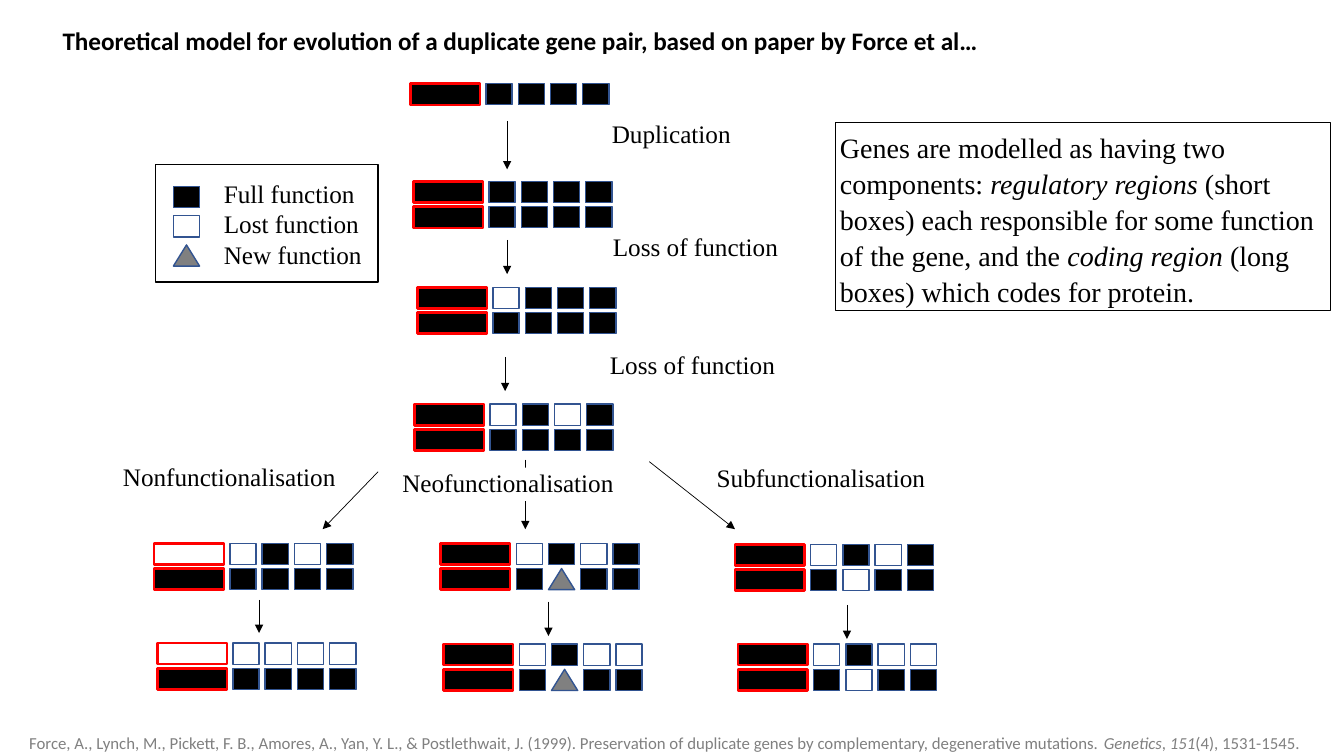
"""Slide showing a model for the evolution of a duplicate gene pair."""
from dataclasses import dataclass

import pptx
import pptx.dml.color
import pptx.enum.shapes
import pptx.enum.text
import pptx.oxml
import pptx.oxml.ns
import pptx.util

Inches = pptx.util.Inches
Pt = pptx.util.Pt
Kind = pptx.enum.shapes.MSO_SHAPE


@dataclass(frozen=True)
class Theme:
    black: str = "000000"
    white: str = "FFFFFF"
    grey: str = "808080"
    coding_line: str = "FF0000"
    regulatory_line: str = "325491"
    heading_font: str = "Calibri"
    body_font: str = "Times New Roman"
    title_size: float = 18
    label_size: float = 18
    note_size: float = 20
    citation_size: float = 12


class GeneSlide:
    coding_width, box_width, box_height = 0.69, 0.26, 0.21
    first_box, box_step, row_step = 0.75, 0.32, 0.25

    def __init__(self, slide, theme):
        self.slide = slide
        self.theme = theme
        self.fills = {"F": theme.black, "L": theme.white, "N": theme.grey}

    def color(self, value):
        return pptx.dml.color.RGBColor.from_string(value)

    def shape(self, kind, left, top, width, height, fill=None, line=None, weight=1):
        shape = self.slide.shapes.add_shape(
            kind, Inches(left), Inches(top), Inches(width), Inches(height))
        shape.shadow.inherit = False
        if fill:
            shape.fill.solid()
            shape.fill.fore_color.rgb = self.color(fill)
        else:
            shape.fill.background()
        if line:
            shape.line.color.rgb = self.color(line)
            shape.line.width = Pt(weight)
        else:
            shape.line.fill.background()
        return shape

    def set_text(self, shape, paragraphs, size, font, color, insets=(0.1, 0.05),
                 bold=False, wrap=True):
        frame = shape.text_frame
        frame.word_wrap = wrap
        if not wrap:
            frame.auto_size = pptx.enum.text.MSO_AUTO_SIZE.SHAPE_TO_FIT_TEXT
        frame.vertical_anchor = pptx.enum.text.MSO_ANCHOR.TOP
        frame.margin_left = frame.margin_right = Inches(insets[0])
        frame.margin_top = frame.margin_bottom = Inches(insets[1])
        for index, runs in enumerate(paragraphs):
            paragraph = frame.add_paragraph() if index else frame.paragraphs[0]
            paragraph.alignment = pptx.enum.text.PP_ALIGN.LEFT
            for text, italic in runs:
                run = paragraph.add_run()
                run.text = text
                run.font.name = font
                run.font.size = Pt(size)
                run.font.bold = bold
                run.font.italic = italic
                run.font.color.rgb = self.color(color)

    def title(self, text):
        title = self.slide.shapes.title
        title.left, title.top = Inches(0.52), Inches(0.2)
        title.width, title.height = Inches(9.38), Inches(0.4)
        theme = self.theme
        self.set_text(title, [[(text, False)]], theme.title_size, theme.heading_font,
                      theme.black, bold=True, wrap=False)

    def text_box(self, left, top, width, height):
        return self.slide.shapes.add_textbox(
            Inches(left), Inches(top), Inches(width), Inches(height))

    def label(self, text, left, top, width):
        theme = self.theme
        self.set_text(self.text_box(left, top, width, 0.49), [[(text, False)]],
                      theme.label_size, theme.body_font, theme.black)

    def panel(self, lines, left, top, width, height):
        theme = self.theme
        panel = self.shape(Kind.RECTANGLE, left, top, width, height, theme.white)
        self.set_text(panel, [[(line, False)] for line in lines], theme.label_size,
                      theme.body_font, theme.black, insets=(0, 0))

    def note(self, runs, left, top, width, height):
        theme = self.theme
        note = self.shape(Kind.RECTANGLE, left, top, width, height,
                          theme.white, theme.black, 0.75)
        self.set_text(note, [runs], theme.note_size, theme.body_font, theme.black,
                      insets=(0.04, 0.05))
        paragraph = note.text_frame.paragraphs[0]
        paragraph.line_spacing = 1.07
        paragraph.space_after = Pt(8)

    def citation(self, runs, left, top, width, height):
        theme = self.theme
        self.set_text(self.text_box(left, top, width, height), [runs],
                      theme.citation_size, theme.heading_font, theme.grey, wrap=False)

    def arrow(self, start_x, start_y, end_x, end_y):
        arrow = self.slide.shapes.add_connector(
            pptx.enum.shapes.MSO_CONNECTOR.STRAIGHT, Inches(start_x),
            Inches(start_y), Inches(end_x), Inches(end_y))
        arrow.line.color.rgb = self.color(self.theme.black)
        arrow.line.width = Pt(0.5)
        head = pptx.oxml.parse_xml(
            f'<a:tailEnd {pptx.oxml.ns.nsdecls("a")} type="triangle"/>')
        arrow.line._get_or_add_ln().append(head)
        arrow._element.spPr.append(pptx.oxml.parse_xml(
            f'<a:effectLst {pptx.oxml.ns.nsdecls("a")}/>'))

    def regulatory_region(self, state, left, top):
        kind = Kind.ISOSCELES_TRIANGLE if state == "N" else Kind.RECTANGLE
        self.shape(kind, left, top, self.box_width, self.box_height,
                   self.fills[state], self.theme.regulatory_line)

    def genes(self, left, top, *copies):
        for row, (coding, *regions) in enumerate(copies):
            y = top + row * self.row_step
            self.shape(Kind.RECTANGLE, left, y, self.coding_width, self.box_height,
                       self.fills[coding], self.theme.coding_line, 1.75)
            for column, state in enumerate(regions):
                x = left + self.first_box + column * self.box_step
                self.regulatory_region(state, x, y)


def main():
    presentation = pptx.Presentation()
    presentation.slide_width = Inches(13.33)
    presentation.slide_height = Inches(7.5)
    slide = presentation.slides.add_slide(presentation.slide_layouts[5])
    page = GeneSlide(slide, Theme())

    page.title("Theoretical model for evolution of a duplicate gene pair, "
               "based on paper by Force et al…")

    for ends in [
        (5.03, 1.2, 5.03, 1.68), (5.03, 2.38, 5.03, 2.72), (5.01, 3.54, 5.01, 3.88),
        (3.75, 4.68, 3.2, 5.25), (5.21, 4.56, 5.21, 5.25), (6.44, 4.58, 7.29, 5.25),
        (2.57, 5.95, 2.57, 6.28), (5.44, 5.97, 5.44, 6.31), (8.4, 6, 8.4, 6.34),
    ]:
        page.arrow(*ends)

    for stage in [
        (4.07, 0.83, "FFFFF"),
        (4.1, 1.8, "FFFFF", "FFFFF"),
        (4.14, 2.85, "FLFFF", "FFFFF"),
        (4.11, 4.01, "FLFLF", "FFFFF"),
        (1.53, 5.39, "LLFLF", "FFFFF"),
        (4.37, 5.39, "FLFLF", "FFNFF"),
        (7.29, 5.4, "FLFLF", "FFLFF"),
        (1.56, 6.38, "LLLLL", "FFFFF"),
        (4.4, 6.39, "FLFLL", "FFNFF"),
        (7.32, 6.39, "FLFLL", "FFLFF"),
    ]:
        page.genes(*stage)

    for label in [
        ("Duplication", 5.97, 1.12, 2.37),
        ("Loss of function", 5.98, 2.25, 2.88),
        ("Loss of function", 5.95, 3.42, 2.91),
        ("Nonfunctionalisation", 1.12, 4.53, 2.72),
        ("Subfunctionalisation", 7.01, 4.54, 2.67),
    ]:
        page.label(*label)
    page.panel(["Neofunctionalisation"], 3.99, 4.64, 2.36, 0.33)

    page.panel(["Full function", "Lost function", "New function"],
               2.22, 1.77, 1.47, 1.35)
    for row, state in enumerate("FLN"):
        page.regulatory_region(state, 1.72, 1.85 + row * 0.29)
    page.shape(Kind.RECTANGLE, 1.54, 1.63, 2.21, 1.17, line=page.theme.black)

    page.note([
        ("Genes are modelled as having two components: ", False),
        ("regulatory regions ", True),
        ("(short boxes) each responsible for some function of the gene, and the ", False),
        ("coding region", True),
        (" (long boxes) which codes for protein.", False),
    ], 8.29, 1.22, 4.91, 1.86)
    page.citation([
        ("Force, A., Lynch, M., Pickett, F. B., Amores, A., Yan, Y. L., & Postlethwait, J. "
         "(1999). Preservation of duplicate genes by complementary, degenerative mutations. ",
         False),
        ("Genetics", True), (", ", False), ("151", True), ("(4), 1531-1545.", False),
    ], 0.19, 7.22, 12.95, 0.3)
    presentation.save("out.pptx")


if __name__ == "__main__":
    main()
